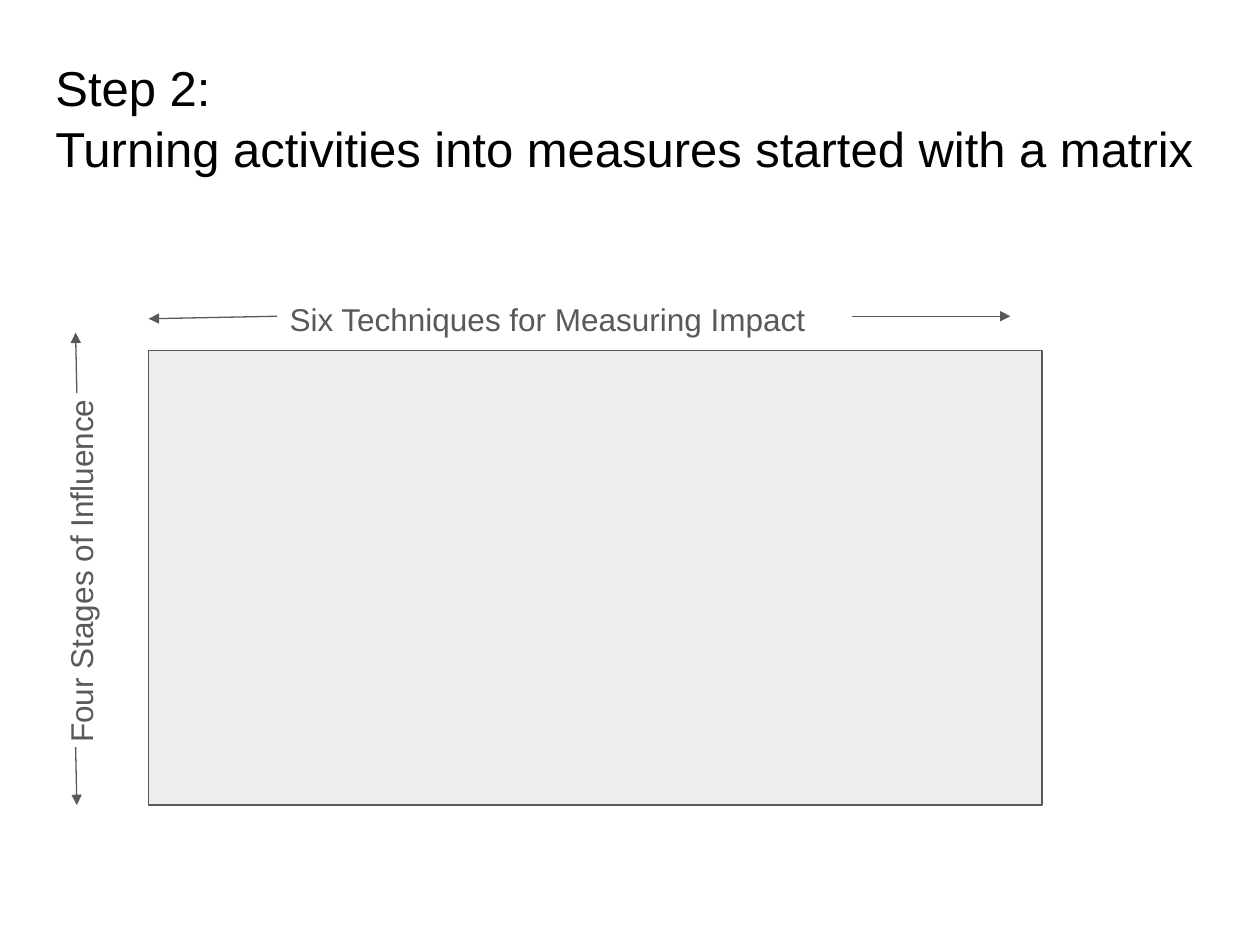
import pptx
import pptx.util
import pptx.dml.color
import pptx.enum.shapes
import pptx.enum.text
import lxml.etree
from pptx.util import Inches

FONT = "Arial"
BLACK, GRAY, PALE = "000000", "595959", "EEEEEE"

TITLE = ["Step 2:", "Turning activities into measures started with a matrix"]
TITLE_BOX = (0.34, 0.33, 9.32, 0.63)
MATRIX_BOX = (1.18, 2.78, 7.09, 3.61)

# text, box, rotation, left margin
AXIS_LABELS = [
    ("Six Techniques for Measuring Impact", (2.2, 2.24, 5.4, 0.54), 0, 0.1),
    ("Four Stages of Influence", (-1.01, 3.99, 3.43, 0.72), 270, 0.17),
]
# start and arrowhead end
AXIS_ARROWS = [
    ((2.2, 2.51), (1.18, 2.53)),
    ((6.76, 2.51), (8.02, 2.51)),
    ((0.61, 3.12), (0.6, 2.64)),
    ((0.6, 5.93), (0.61, 6.39)),
]


def inches(values):
    return [Inches(value) for value in values]


def rgb(color):
    return pptx.dml.color.RGBColor.from_string(color)


def write(frame, lines, size, color, spacing, left_margin=0.1):
    """Fill a top-anchored text frame with one left-aligned paragraph."""
    frame.word_wrap = True
    frame.auto_size = pptx.enum.text.MSO_AUTO_SIZE.NONE
    frame.vertical_anchor = pptx.enum.text.MSO_ANCHOR.TOP
    frame.margin_left = Inches(left_margin)
    frame.margin_right = frame.margin_top = frame.margin_bottom = Inches(0.1)
    paragraph = frame.paragraphs[0]
    paragraph.alignment = pptx.enum.text.PP_ALIGN.LEFT
    paragraph.line_spacing = spacing
    for number, line in enumerate(lines):
        if number:
            paragraph.add_line_break()
        run = paragraph.add_run()
        run.text = line
        run.font.name = FONT
        run.font.size = pptx.util.Pt(size)
        run.font.color.rgb = rgb(color)


def outline(line):
    line.color.rgb = rgb(GRAY)
    line.width = pptx.util.Pt(0.75)


def add_arrow(slide, start, end):
    arrow = slide.shapes.add_connector(
        pptx.enum.shapes.MSO_CONNECTOR.STRAIGHT, *inches(start + end))
    outline(arrow.line)
    head = lxml.etree.SubElement(
        arrow.line._get_or_add_ln(), pptx.oxml.ns.qn("a:tailEnd"))
    head.set("type", "triangle")
    lxml.etree.SubElement(
        arrow._element.spPr, pptx.oxml.ns.qn("a:effectLst"))


def main():
    deck = pptx.Presentation()
    deck.slide_width, deck.slide_height = inches((10, 7.5))
    slide = deck.slides.add_slide(deck.slide_layouts[5])

    title = slide.shapes.title
    title.left, title.top, title.width, title.height = inches(TITLE_BOX)
    write(title.text_frame, TITLE, 28, BLACK, 1.05)

    for text, box, rotation, left_margin in AXIS_LABELS:
        label = slide.shapes.add_textbox(*inches(box))
        label.rotation = rotation
        write(label.text_frame, [text], 18, GRAY, 1.15, left_margin)

    matrix = slide.shapes.add_shape(
        pptx.enum.shapes.MSO_SHAPE.RECTANGLE, *inches(MATRIX_BOX))
    matrix.shadow.inherit = False
    matrix.fill.solid()
    matrix.fill.fore_color.rgb = rgb(PALE)
    outline(matrix.line)

    for start, end in AXIS_ARROWS:
        add_arrow(slide, start, end)

    deck.save("out.pptx")


if __name__ == "__main__":
    main()
